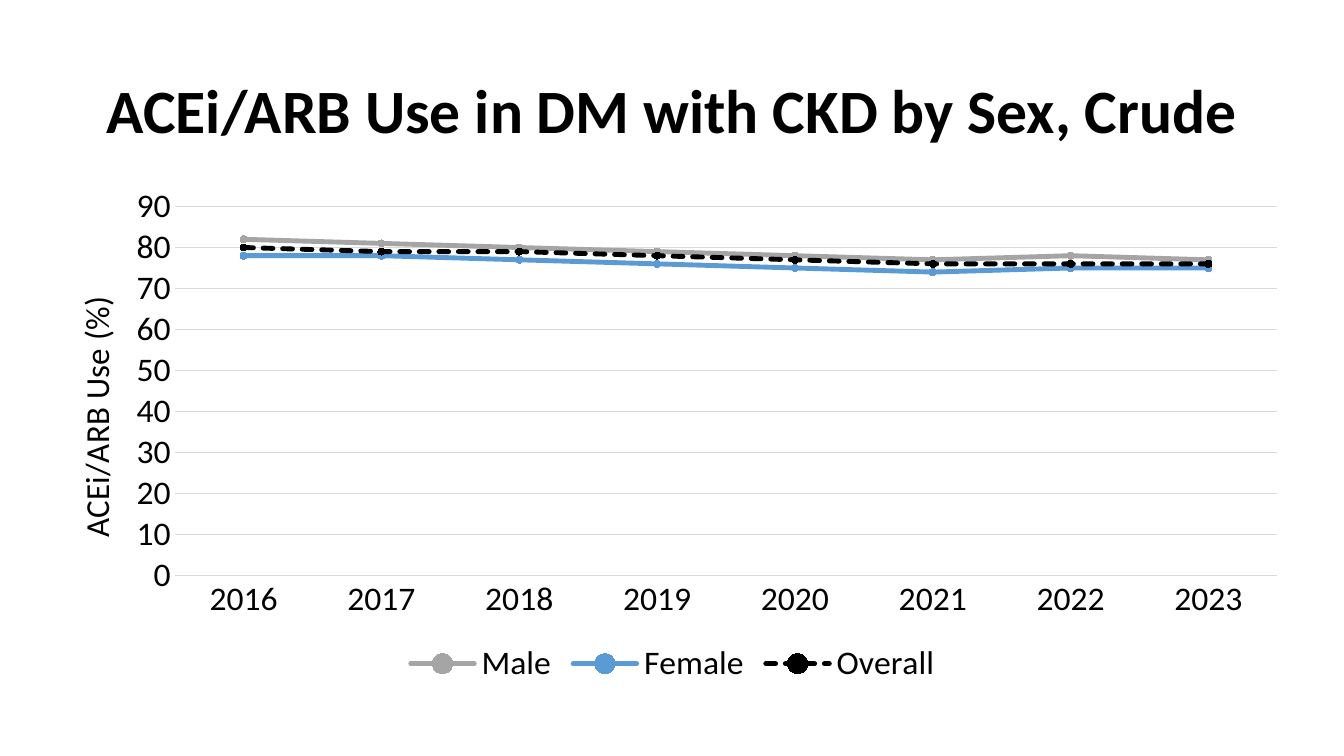
from lxml import etree
from pptx import Presentation
from pptx import util as u
from pptx.chart.data import CategoryChartData
from pptx.dml.color import RGBColor
from pptx.enum import chart as charts, dml, text
from pptx.oxml.ns import qn

BLACK = RGBColor(0, 0, 0)
GRAY = RGBColor(0xA5, 0xA5, 0xA5)
BLUE = RGBColor(0x5B, 0x9B, 0xD5)
GRID = RGBColor(0xD9, 0xD9, 0xD9)
FONT = "Calibri"

TITLE = "ACEi/ARB Use in DM with CKD by Sex, Crude"
AXIS_TITLE = "ACEi/ARB Use (%)"
YEARS = [str(year) for year in range(2016, 2024)]
SERIES = [
    ("Male", GRAY, None, (82, 81, 80, 79, 78, 77, 78, 77)),
    ("Female", BLUE, None, (78, 78, 77, 76, 75, 74, 75, 75)),
    ("Overall", BLACK, dml.MSO_LINE.SQUARE_DOT, (80, 79, 79, 78, 77, 76, 76, 76)),
]
TITLE_BOX = (0.92, 0.4, 11.5, 1.45)
CHART_BOX = (0.42, 1.85, 12.5, 5)
PLOT_SHARE = {"layoutTarget": "inner", "xMode": "edge", "yMode": "edge",
              "x": 0.105, "y": 0.02, "w": 0.875, "h": 0.747}
AXIS_TITLE_SHARE = {"xMode": "edge", "yMode": "edge", "x": 0.02, "y": 0.2}


def style_font(font, size, bold=False):
    font.name, font.size, font.bold = FONT, u.Pt(size), bold
    font.color.rgb = BLACK


def set_layout(parent, index, shares):
    for old_layout in parent.findall(qn("c:layout")):
        parent.remove(old_layout)
    layout = etree.Element(qn("c:layout"))
    manual = etree.SubElement(layout, qn("c:manualLayout"))
    for tag, value in shares.items():
        etree.SubElement(manual, qn("c:" + tag)).set("val", str(value))
    parent.insert(index, layout)


def add_title(slide):
    frame = slide.shapes.add_textbox(*map(u.Inches, TITLE_BOX)).text_frame
    frame.word_wrap = True
    frame.vertical_anchor = text.MSO_ANCHOR.MIDDLE
    frame.text = TITLE
    paragraph = frame.paragraphs[0]
    paragraph.alignment = text.PP_ALIGN.CENTER
    paragraph.line_spacing = 0.9
    style_font(paragraph.runs[0].font, 44, True)


def style_axes(chart):
    for axis in (chart.category_axis, chart.value_axis):
        axis.major_tick_mark = axis.minor_tick_mark = charts.XL_TICK_MARK.NONE
        style_font(axis.tick_labels.font, 24)
    values = chart.value_axis
    values.minimum_scale, values.maximum_scale, values.major_unit = 0, 90, 10
    values.format.line.fill.background()
    for line in (chart.category_axis.format.line, values.major_gridlines.format.line):
        line.color.rgb = GRID
        line.width = u.Pt(0.75)
    title = values.axis_title
    title.text_frame.text = AXIS_TITLE
    style_font(title.text_frame.paragraphs[0].runs[0].font, 24)
    element = values.axis_title._element
    body = next(element.iter(qn("a:bodyPr")))
    body.set("rot", "-5400000")
    body.set("vert", "horz")
    set_layout(element, 1, AXIS_TITLE_SHARE)


def style_series(series, color, dash):
    series.smooth = False
    series.format.line.color.rgb = color
    series.format.line.width = u.Pt(3.5)
    if dash:
        series.format.line.dash_style = dash
    series.format.line._get_or_add_ln().set("cap", "rnd")
    marker = series.marker
    marker.style, marker.size = charts.XL_MARKER_STYLE.CIRCLE, 5
    marker.format.fill.solid()
    marker.format.fill.fore_color.rgb = color
    marker.format.line.color.rgb = color


def add_line_chart(slide):
    data = CategoryChartData()
    data.categories = YEARS
    for name, _, _, values in SERIES:
        data.add_series(name, values)
    chart = slide.shapes.add_chart(
        charts.XL_CHART_TYPE.LINE_MARKERS, *map(u.Inches, CHART_BOX), data).chart
    chart.has_title = False
    style_font(chart.font, 24)
    chart.has_legend = True
    chart.legend.position = charts.XL_LEGEND_POSITION.BOTTOM
    chart.legend.include_in_layout = False
    style_font(chart.legend.font, 24)
    style_axes(chart)
    plot = chart.plots[0]
    plot.vary_by_categories = False
    for series, (_, color, dash, _) in zip(plot.series, SERIES):
        style_series(series, color, dash)
    set_layout(next(chart.element.iter(qn("c:plotArea"))) if hasattr(chart, "element")
               else next(chart._chartSpace.iter(qn("c:plotArea"))), 0, PLOT_SHARE)


def main():
    """Build the slide with its title and line chart."""
    presentation = Presentation()
    presentation.slide_width = u.Inches(13.33)
    presentation.slide_height = u.Inches(7.5)
    slide = presentation.slides.add_slide(presentation.slide_layouts[6])
    add_title(slide)
    add_line_chart(slide)
    presentation.save("out.pptx")


if __name__ == "__main__":
    main()
